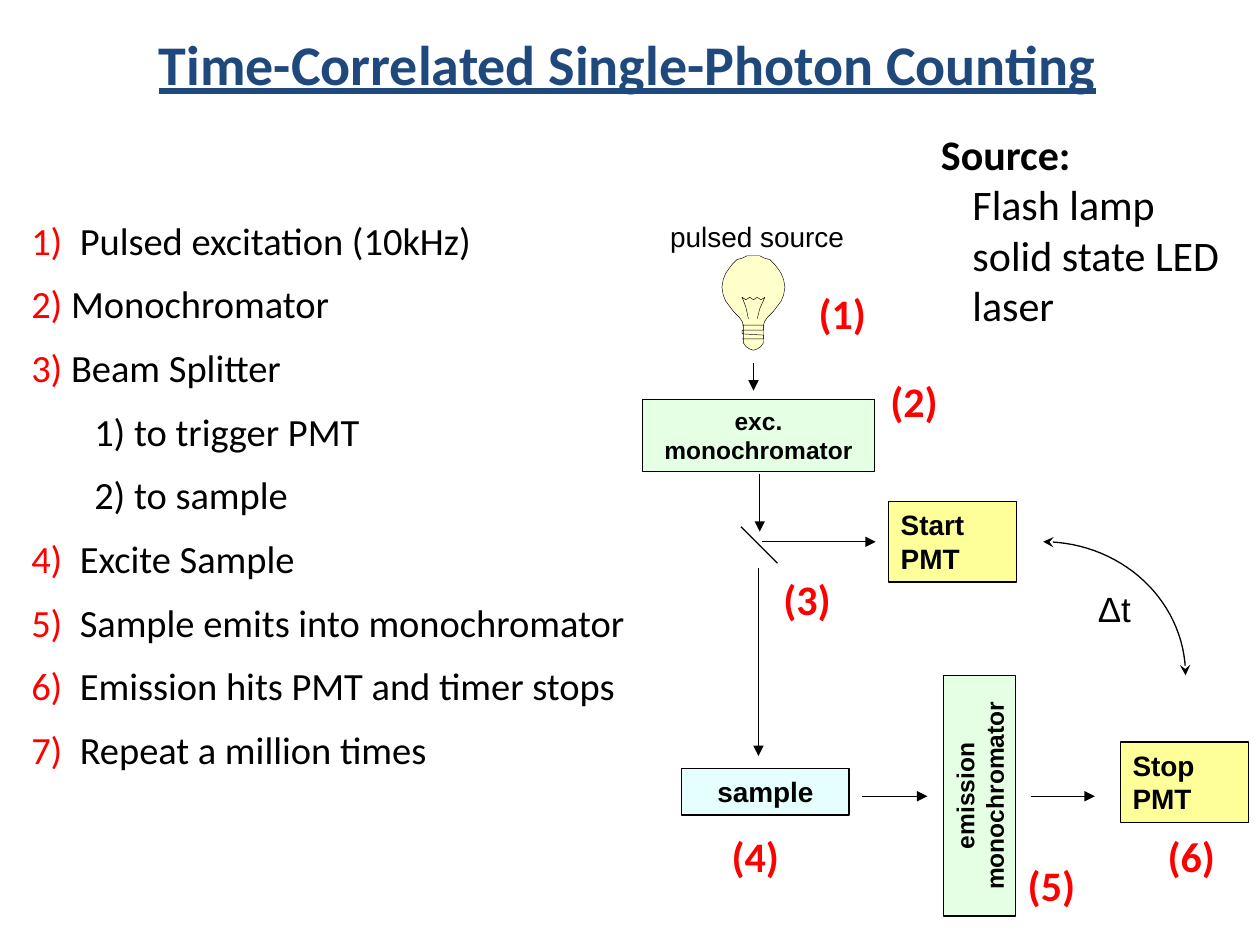
from math import cos, pi, sin

from lxml.etree import SubElement
from pptx import Presentation
from pptx.dml.color import RGBColor
from pptx.enum.shapes import MSO_CONNECTOR, MSO_SHAPE
from pptx.enum.text import MSO_ANCHOR, MSO_AUTO_SIZE as AUTO_SIZE, PP_ALIGN as ALIGN
from pptx.oxml.ns import qn
from pptx.util import Inches, Pt

COLORS = {
    "title": "1F497D", "text": "000000", "number": "FF0000", "detector": "FFFF99",
    "sample": "CCFFFF", "monochromator": "CCFFCC", "bulb": "FFFFCC",
}
STEPS = [
    ("1)  ", "Pulsed excitation (10kHz)"),
    ("2) ", "Monochromator"),
    ("3) ", "Beam Splitter"),
    ("", "\t1) to trigger PMT"),
    ("", "\t2) to sample"),
    ("4)  ", "Excite Sample"),
    ("5)  ", "Sample emits into monochromator"),
    ("6)  ", "Emission hits PMT and timer stops"),
    ("7)  ", "Repeat a million times"),
]
# label, left, top, width, height, colour, size, alignment, rotation, opacity
BOXES = [
    ("Start PMT", 7.05, 3.98, 1.02, 0.64, "detector", 16, ALIGN.LEFT, 0, 100),
    ("Stop PMT", 8.89, 5.89, 1.02, 0.64, "detector", 16, ALIGN.LEFT, 0, 100),
    ("sample", 5.41, 6.1, 1.33, 0.37, "sample", 16, ALIGN.CENTER, 0, 50),
    ("exc. monochromator", 5.1, 3.17, 1.84, 0.57, "monochromator", 14, ALIGN.CENTER, 0, 50),
    ("emission monochromator", 6.82, 6.03, 1.91, 0.57, "monochromator", 14, ALIGN.CENTER, 270, 50),
]
ARROWS = [
    (5.98, 2.88, 5.98, 3.1), (6.03, 3.76, 6.03, 4.22), (6.05, 4.3, 6.95, 4.3),
    (6.02, 4.51, 6.02, 6), (6.84, 6.32, 7.36, 6.32), (8.18, 6.32, 8.69, 6.32),
]
MARKERS = [(6.37, 2.23), (6.94, 2.93), (6.09, 4.5), (5.68, 6.54), (8.03, 6.77), (9.14, 6.54)]

# Bulb points are offsets from the top centre of the glass
BULB_RIGHT = [
    (0, 0), (0.05, 0), (0.09, 0.02), (0.13, 0.03), (0.17, 0.07), (0.2, 0.11), (0.22, 0.14),
    (0.24, 0.19), (0.25, 0.25), (0.24, 0.31), (0.22, 0.36), (0.19, 0.4), (0.16, 0.44),
    (0.11, 0.49), (0.09, 0.52), (0.08, 0.55), (0.08, 0.69), (0.06, 0.72), (0.03, 0.74), (0, 0.75),
]
FILAMENT = [
    (-0.04, 0.5), (-0.06, 0.41), (-0.09, 0.33), (-0.06, 0.35), (-0.03, 0.33), (0, 0.35),
    (0.03, 0.33), (0.06, 0.35), (0.09, 0.33), (0.05, 0.42), (0.03, 0.5),
]
SCREW_THREAD = [
    (-0.09, 0.55), (0.08, 0.55), (0.08, 0.59), (-0.09, 0.59),
    (-0.09, 0.62), (0.08, 0.63), (0.08, 0.66), (-0.09, 0.66),
]


def color(name):
    return RGBColor.from_string(COLORS[name])


def style_run(run, size, name="text", font="Calibri", bold=False):
    run.font.size = Pt(size)
    run.font.name = font
    run.font.bold = bold
    run.font.color.rgb = color(name)


def style_line(shape, width=0.75, **ends):
    shape.line.color.rgb = color("text")
    shape.line.width = Pt(width)
    for end, kind in ends.items():
        SubElement(shape.line._get_or_add_ln(), qn(f"a:{end}"), type=kind)


def add_text(slide, box, lines, size, name="text", font="Calibri", wrap=True):
    shape = slide.shapes.add_textbox(*map(Inches, box))
    frame = shape.text_frame
    frame.text = "\n".join(lines)
    frame.word_wrap = wrap
    frame.auto_size = AUTO_SIZE.SHAPE_TO_FIT_TEXT
    for paragraph in frame.paragraphs:
        style_run(paragraph.runs[0], size, name, font)
    return frame


def add_title(slide, text):
    title = slide.shapes.title
    title.left, title.top, title.width, title.height = map(Inches, (0.48, 0, 9, 1))
    title.text_frame.text = text
    title.text_frame.vertical_anchor = MSO_ANCHOR.MIDDLE
    paragraph = title.text_frame.paragraphs[0]
    paragraph.alignment = ALIGN.CENTER
    style_run(paragraph.runs[0], 32, "title", bold=True)
    paragraph.runs[0].font.underline = True


def add_steps(slide):
    shape = slide.shapes.add_textbox(*map(Inches, (0.15, 1.67, 5.19, 4.56)))
    frame = shape.text_frame
    frame.word_wrap = True
    for index, (number, text) in enumerate(STEPS):
        paragraph = frame.add_paragraph() if index else frame.paragraphs[0]
        paragraph.space_after = Pt(10)
        for part, name in ((number, "number"), (text, "text")):
            if part:
                run = paragraph.add_run()
                run.text = part
                style_run(run, 22, name)


def add_sources(slide):
    lines = ["Source:", "Flash lamp", "solid state LED", "laser"]
    frame = add_text(slide, (7.37, 0.97, 2.5, 1.72), lines, 24, wrap=False)
    heading, *items = frame.paragraphs
    heading.runs[0].font.bold = True
    for paragraph in items:
        paragraph._p.get_or_add_pPr().set("marL", str(Inches(0.25)))


def add_box(slide, label, left, top, width, height, name, size, alignment, rotation, opacity):
    shape = slide.shapes.add_shape(MSO_SHAPE.RECTANGLE, *map(Inches, (left, top, width, height)))
    shape.shadow.inherit = False
    shape.rotation = rotation
    shape.fill.solid()
    shape.fill.fore_color.rgb = color(name)
    if opacity < 100:
        rgb = shape._element.spPr.find(qn("a:solidFill"))[0]
        SubElement(rgb, qn("a:alpha"), val=str(opacity * 1000))
    style_line(shape)
    frame = shape.text_frame
    frame.text = label
    frame.word_wrap = True
    frame.vertical_anchor = MSO_ANCHOR.TOP
    frame.paragraphs[0].alignment = alignment
    style_run(frame.paragraphs[0].runs[0], size, font="Arial", bold=True)


def add_line(slide, ends, **heads):
    line = slide.shapes.add_connector(MSO_CONNECTOR.STRAIGHT, *map(Inches, ends))
    style_line(line, **heads)
    SubElement(line._element.spPr, qn("a:effectLst"))


def add_outline(slide, points, width, fill=None, close=False, **heads):
    start, *rest = [(Inches(x), Inches(y)) for x, y in points]
    builder = slide.shapes.build_freeform(*start)
    builder.add_line_segments(rest, close=close)
    shape = builder.convert_to_shape()
    shape.shadow.inherit = False
    if fill:
        shape.fill.solid()
        shape.fill.fore_color.rgb = color(fill)
    else:
        shape.fill.background()
    style_line(shape, width, **heads)
    return shape


def add_bulb(slide, center, top):
    left_side = [(-x, y) for x, y in BULB_RIGHT[-2:0:-1]]
    parts = [(BULB_RIGHT + left_side, "bulb"), (FILAMENT, None), (SCREW_THREAD, None)]
    for points, fill in parts:
        placed = [(center + x, top + y) for x, y in points]
        add_outline(slide, placed, 0.25, fill, close=bool(fill))


def add_time_arc(slide, left, top, width, height):
    steps = 30
    angles = [pi / 2 * step / steps for step in range(steps + 1)]
    points = [(left + width * sin(a), top + height * (1 - cos(a))) for a in angles]
    arc = add_outline(slide, points, 0.75, headEnd="stealth", tailEnd="stealth")
    frame = arc.text_frame
    frame.text = "Δt"
    frame.word_wrap = False
    frame.vertical_anchor = MSO_ANCHOR.MIDDLE
    frame.paragraphs[0].alignment = ALIGN.CENTER
    style_run(frame.paragraphs[0].runs[0], 20, font="Arial")


def main():
    presentation = Presentation()
    presentation.slide_width, presentation.slide_height = Inches(10), Inches(7.5)
    slide = presentation.slides.add_slide(presentation.slide_layouts[5])

    # Title and text
    add_title(slide, "Time-Correlated Single-Photon Counting")
    add_sources(slide)
    add_steps(slide)

    # Light path
    add_text(slide, (5.22, 1.69, 1.6, 0.37), ["pulsed source"], 16, font="Arial", wrap=False)
    add_bulb(slide, 5.98, 2.03)
    for box in BOXES:
        add_box(slide, *box)
    for ends in ARROWS:
        add_line(slide, ends, tailEnd="triangle")
    add_line(slide, (5.88, 4.18, 6.17, 4.47))  # beam splitter
    add_time_arc(slide, 8.28, 4.3, 1.13, 1.06)

    # Step markers
    for number, (left, top) in enumerate(MARKERS, 1):
        frame = add_text(slide, (left, top, 0.63, 0.5), [f"({number})"], 24, "number")
        frame.paragraphs[0].alignment = ALIGN.CENTER
        frame.paragraphs[0].runs[0].font.bold = True

    presentation.save("out.pptx")


if __name__ == "__main__":
    main()
